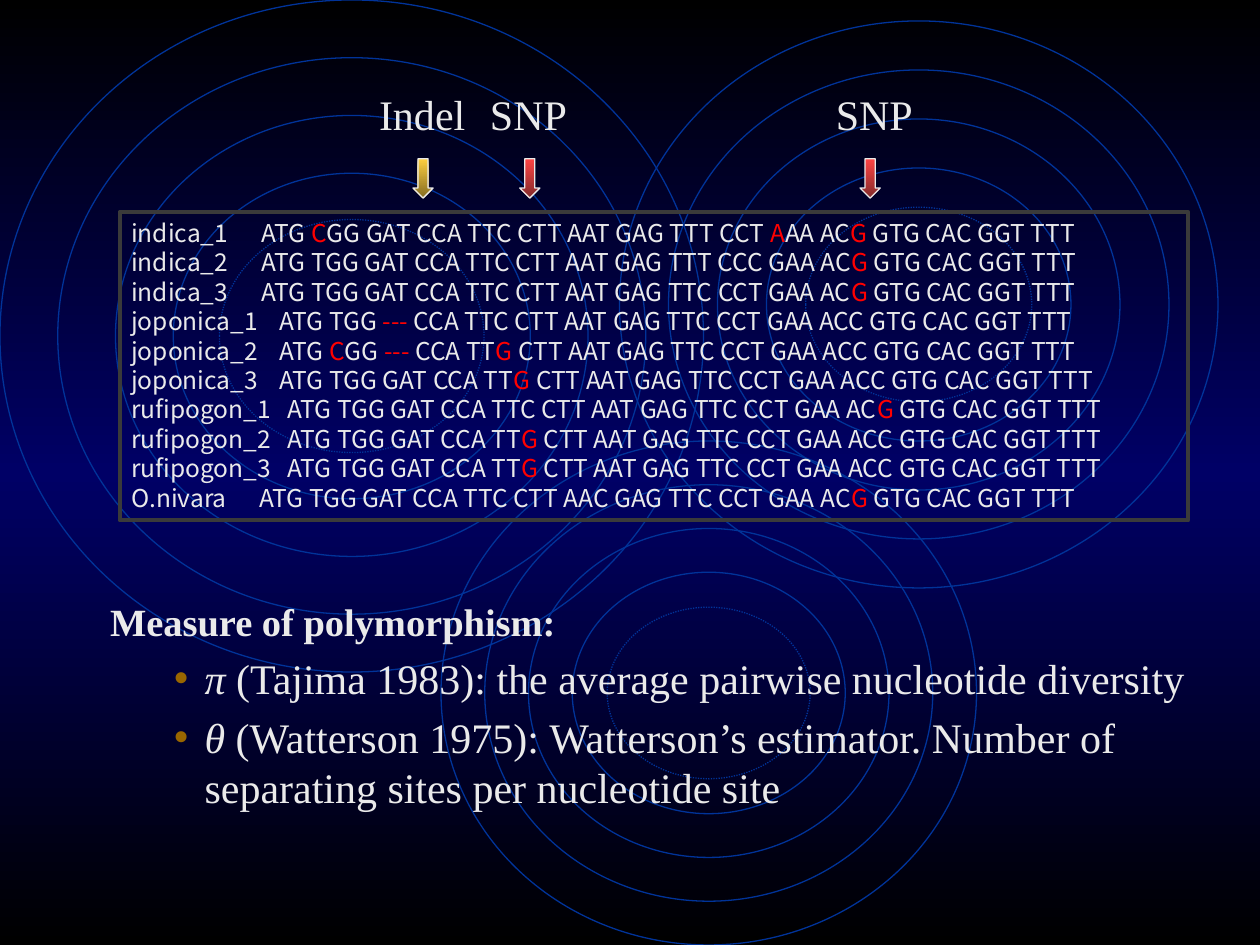
from copy import deepcopy
from dataclasses import dataclass

from lxml.etree import SubElement
from pptx import Presentation
from pptx.dml.color import RGBColor as Color
from pptx.enum.dml import MSO_LINE_DASH_STYLE as Dash
from pptx.enum.shapes import MSO_SHAPE as Shape
from pptx.enum.text import MSO_ANCHOR as Anchor, PP_ALIGN as Align
from pptx.oxml.ns import qn
from pptx.util import Pt


@dataclass(frozen=True)
class Theme:
    serif: str = "Times New Roman"
    sans: str = "Noto Sans CJK SC"
    text: str = "EAEAEA"
    mutation: str = "FF0000"
    ring: str = "003399"
    frame: str = "3A3A3A"
    bullet: str = "996600"
    backdrop: tuple = ("000000", "000066", "000000")
    snp: tuple = ("FE4444", "832B2B")
    indel: tuple = ("FECF40", "846C21")
    sequence_size: float = 14
    heading_size: float = 22
    body_size: float = 24


THEME = Theme()

RING_SETS = [
    (0, 0, 402, 384, 33),
    (252, 252, 306, 288, 25),
    (354, 12, 342, 324, 28),
]
RING_STEPS = (0, 1, 2, 3, 3.8)

SEQUENCE_STARTS = {"indica": 74.3, "joponica": 84.6, "rufipogon": 89.1, "O.nivara": 73.1}
SEQUENCES = [
    ("indica_1", "ATG [C]GG GAT CCA TTC CTT AAT GAG TTT CCT [A]AA AC[G] GTG CAC GGT TTT"),
    ("indica_2", "ATG TGG GAT CCA TTC CTT AAT GAG TTT CCC GAA AC[G] GTG CAC GGT TTT"),
    ("indica_3", "ATG TGG GAT CCA TTC CTT AAT GAG TTC CCT GAA AC[G] GTG CAC GGT TTT"),
    ("joponica_1", "ATG TGG [--- ]CCA TTC CTT AAT GAG TTC CCT GAA ACC GTG CAC GGT TTT"),
    ("joponica_2", "ATG [C]GG [--- ]CCA TT[G] CTT AAT GAG TTC CCT GAA ACC GTG CAC GGT TTT"),
    ("joponica_3", "ATG TGG GAT CCA TT[G] CTT AAT GAG TTC CCT GAA ACC GTG CAC GGT TTT"),
    ("rufipogon_1", "ATG TGG GAT CCA TTC CTT AAT GAG TTC CCT GAA AC[G] GTG CAC GGT TTT"),
    ("rufipogon_2", "ATG TGG GAT CCA TT[G] CTT AAT GAG TTC CCT GAA ACC GTG CAC GGT TTT"),
    ("rufipogon_3", "ATG TGG GAT CCA TT[G] CTT AAT GAG TTC CCT GAA ACC GTG CAC GGT TTT"),
    ("O.nivara", "ATG TGG GAT CCA TTC CTT AAC GAG TTC CCT GAA AC[G] GTG CAC GGT TTT"),
]

MARKERS = [
    ("Indel", 209.5, 68, 236, THEME.indel),
    ("SNP", 272.9, 60, 297, THEME.snp),
    ("SNP", 470.5, 60, 491.5, THEME.snp),
]

HEADING = "Measure of polymorphism:"
MEASURES = [
    ("π", " (Tajima 1983): the average pairwise nucleotide diversity"),
    ("θ", " (Watterson 1975): Watterson’s estimator. Number of separating sites per nucleotide site"),
]


def paint_gradient(fill, colors, owner):
    fill.gradient()
    fill.gradient_angle = 270
    stops = next(owner.element.iter(qn("a:gsLst")))
    for _ in colors[2:]:
        stops.append(deepcopy(stops[0]))
    for index, (stop, color) in enumerate(zip(fill.gradient_stops, colors)):
        stop.color.rgb = Color.from_string(color)
        stop.position = index / (len(colors) - 1)


def add_outline(page, kind, bounds, color, width):
    shape = page.shapes.add_shape(kind, *map(Pt, bounds))
    shape.shadow.inherit = False
    shape.fill.background()
    shape.line.color.rgb = Color.from_string(color)
    shape.line.width = Pt(width)
    return shape


def add_text_box(page, *bounds):
    frame = page.shapes.add_textbox(*map(Pt, bounds)).text_frame
    frame.word_wrap = True
    return frame


def add_span(para, text, size, font=THEME.serif, color=THEME.text, bold=False, italic=False):
    span = para.add_run()
    span.text = text
    span.font.name = font
    span.font.size = Pt(size)
    span.font.color.rgb = Color.from_string(color)
    span.font.bold = bold
    span.font.italic = italic


def add_paras(frame, count):
    return [frame.paragraphs[0]] + [frame.add_paragraph() for _ in range(count - 1)]


def add_rings(page):
    for left, top, width, height, step in RING_SETS:
        for ring in RING_STEPS:
            inset = ring * step
            bounds = (left + inset, top + inset, width - 2 * inset, height - 2 * inset)
            shape = add_outline(page, Shape.OVAL, bounds, THEME.ring, 0.75)
            if ring == RING_STEPS[-1]:
                shape.line.dash_style = Dash.ROUND_DOT


def add_alignment(page):
    box = add_outline(page, Shape.RECTANGLE, (68.4, 121, 610.6, 176.4), THEME.frame, 2.25)
    frame = box.text_frame
    frame.word_wrap = True
    frame.margin_left = Pt(6.6)
    frame.vertical_anchor = Anchor.TOP
    for para, (name, sequence) in zip(add_paras(frame, len(SEQUENCES)), SEQUENCES):
        para.alignment = Align.LEFT
        para.line_spacing = Pt(16.8)
        start = SEQUENCE_STARTS[name.split("_")[0]]
        tabs = SubElement(para._p.get_or_add_pPr(), qn("a:tabLst"))
        SubElement(tabs, qn("a:tab"), pos=str(Pt(start)), algn="l")
        pieces = f"{name}\t{sequence}".replace("]", "[").split("[")
        for index, piece in enumerate(pieces):
            color = THEME.mutation if index % 2 else THEME.text
            add_span(para, piece, THEME.sequence_size, THEME.sans, color)


def add_markers(page):
    for label, left, width, arrow_left, colors in MARKERS:
        bounds = (arrow_left, 90.7, 11.5, 22.5)
        arrow = add_outline(page, Shape.DOWN_ARROW, bounds, THEME.text, 0.75)
        paint_gradient(arrow.fill, colors, arrow)
        frame = add_text_box(page, left, 46.8, width, 36)
        add_span(frame.paragraphs[0], label, THEME.body_size)


def add_measures(page):
    frame = add_text_box(page, 19.8, 338.2, 670.3, 154)
    heading, *bullets = add_paras(frame, 1 + len(MEASURES))
    heading.space_before = Pt(4.4)
    heading._p.get_or_add_pPr().set("marL", str(Pt(36)))
    add_span(heading, HEADING, THEME.heading_size, bold=True)
    for para, (symbol, meaning) in zip(bullets, MEASURES):
        para.space_before = Pt(4.8)
        props = para._p.get_or_add_pPr()
        props.set("marL", str(Pt(90)))
        props.set("indent", str(Pt(-18)))
        SubElement(SubElement(props, qn("a:buClr")), qn("a:srgbClr"), val=THEME.bullet)
        SubElement(props, qn("a:buSzPct"), val="110000")
        SubElement(props, qn("a:buFont"), typeface=THEME.serif)
        SubElement(props, qn("a:buChar"), char="•")
        add_span(para, symbol, THEME.body_size, italic=True)
        add_span(para, meaning, THEME.body_size)


def main():
    deck = Presentation()
    deck.slide_width, deck.slide_height = Pt(720), Pt(540)
    page = deck.slides.add_slide(deck.slide_layouts[6])
    paint_gradient(page.background.fill, THEME.backdrop, page)
    add_rings(page)
    add_alignment(page)
    add_markers(page)
    add_measures(page)
    deck.save("out.pptx")


if __name__ == "__main__":
    main()
